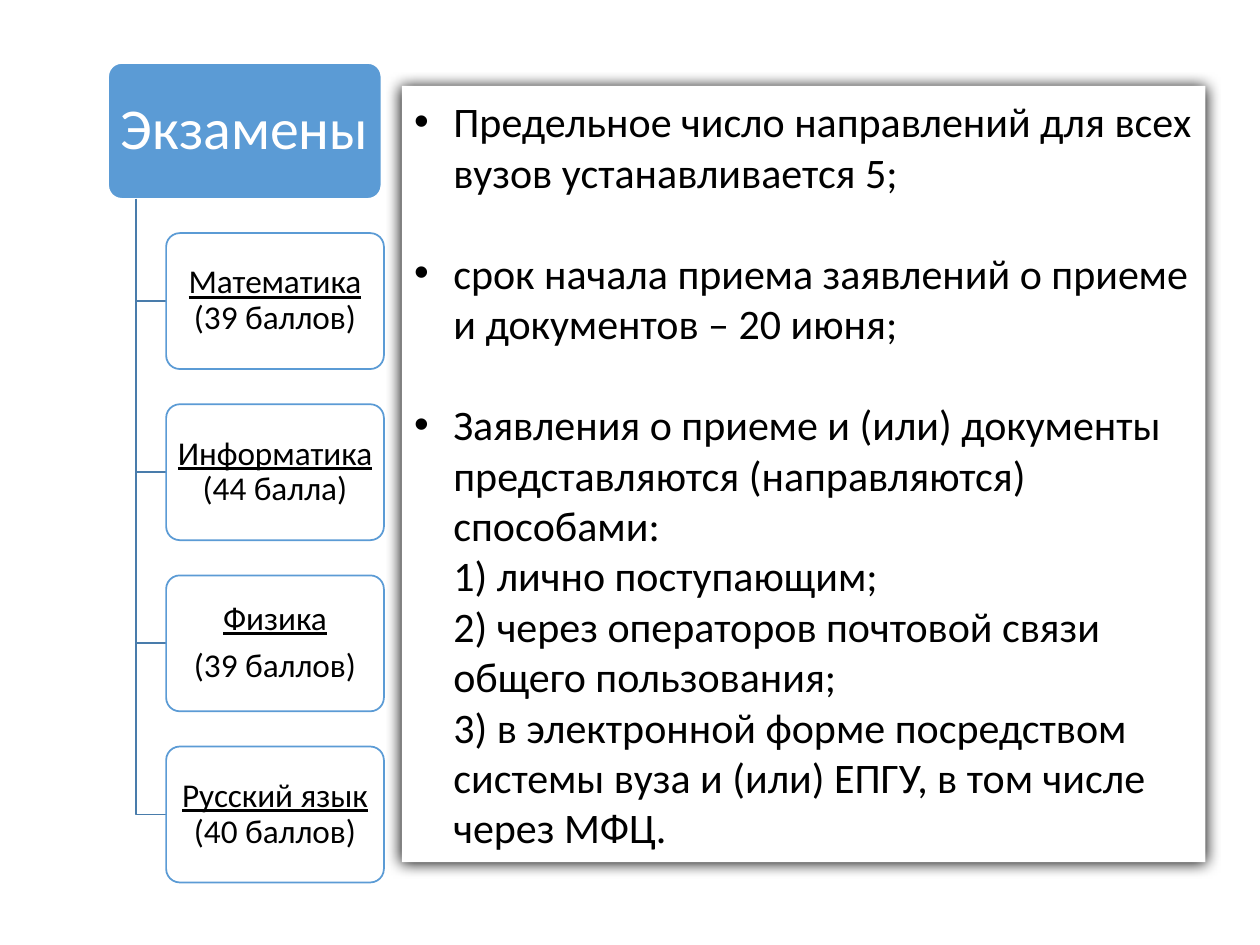
"""Exam subjects with minimum scores beside the rules for applying."""
import dataclasses

import lxml.etree
import pptx
import pptx.dml.color
import pptx.enum.shapes
import pptx.enum.text
import pptx.oxml
import pptx.oxml.ns
import pptx.util

Cm = pptx.util.Cm
Pt = pptx.util.Pt
Kind = pptx.enum.shapes.MSO_SHAPE

SUBJECTS = [
    [("Математика", " (39 баллов)")],
    [("Информатика", " (44 балла)")],
    [("Физика", ""), ("", "(39 баллов)")],
    [("Русский язык", " (40 баллов)")],
]
RULES = [
    "Предельное число направлений для всех вузов устанавливается 5;",
    "срок начала приема заявлений о приеме и документов – 20 июня;",
    "Заявления о приеме и (или) документы представляются (направляются) способами:\n"
    "1) лично поступающим;\n"
    "2) через операторов почтовой связи общего пользования;\n"
    "3) в электронной форме посредством системы вуза и (или) ЕПГУ, "
    "в том числе через МФЦ.",
]


@dataclasses.dataclass(frozen=True)
class Theme:
    """Colours and type of the slide."""
    font: str = "Calibri"
    accent: str = "5B9BD5"
    branch: str = "497CAB"
    white: str = "FFFFFF"
    black: str = "000000"
    heading_size: int = 33
    subject_size: int = 19
    rule_size: int = 24
    line_width: int = 1


class Board:
    """Draws the elements of one slide in a given theme."""

    def __init__(self, slide, theme):
        self.shapes = slide.shapes
        self.theme = theme

    def colour(self, target, value):
        target.rgb = pptx.dml.color.RGBColor.from_string(value)

    def style(self, paragraph, size, value):
        paragraph.font.name = self.theme.font
        paragraph.font.size = Pt(size)
        self.colour(paragraph.font.color, value)

    def outline(self, shape, value):
        self.colour(shape.line.color, value)
        shape.line.width = Pt(self.theme.line_width)

    def box(self, kind, left, top, width, height, fill):
        shape = self.shapes.add_shape(kind, Cm(left), Cm(top), Cm(width), Cm(height))
        shape.shadow.inherit = False
        shape.fill.solid()
        self.colour(shape.fill.fore_color, fill)
        shape.text_frame.word_wrap = True
        return shape

    def card(self, left, top, width, height, fill, line, lines, size, value, inset):
        card = self.box(Kind.ROUNDED_RECTANGLE, left, top, width, height, fill)
        card.adjustments[0] = 0.1
        self.outline(card, line)
        frame = card.text_frame
        frame.vertical_anchor = pptx.enum.text.MSO_ANCHOR.MIDDLE
        frame.margin_left = frame.margin_right = Cm(inset)
        frame.margin_top = frame.margin_bottom = Cm(0.08)
        for index, (name, score) in enumerate(lines):
            paragraph = frame.add_paragraph() if index else frame.paragraphs[0]
            paragraph.alignment = pptx.enum.text.PP_ALIGN.CENTER
            paragraph.line_spacing = 0.9
            if index:
                paragraph.space_before = Pt(6.5)
            self.style(paragraph, size, value)
            for text, underlined in ((name, True), (score, False)):
                if text:
                    run = paragraph.add_run()
                    run.text = text
                    run.font.underline = underlined
        return card

    def heading(self, text, left, top, width, height):
        theme = self.theme
        self.card(left, top, width, height, theme.accent, theme.white,
                  [("", text)], theme.heading_size, theme.white, 0.15)

    def subject(self, lines, left, top, width, height):
        theme = self.theme
        card = self.card(left, top, width, height, theme.white, theme.accent,
                         lines, theme.subject_size, theme.black, 0.1)
        tint = card.fill._xPr.find(".//" + pptx.oxml.ns.qn("a:srgbClr"))
        lxml.etree.SubElement(tint, pptx.oxml.ns.qn("a:alpha"), val="90000")

    def branch(self, left, top, right, bottom):
        builder = self.shapes.build_freeform(Cm(left), Cm(top))
        builder.add_line_segments(
            [(Cm(left), Cm(bottom)), (Cm(right), Cm(bottom))], close=False)
        elbow = builder.convert_to_shape()
        elbow.shadow.inherit = False
        elbow.fill.background()
        self.outline(elbow, self.theme.branch)

    def cast_shadow(self, shape):
        effects = shape._element.spPr.find(pptx.oxml.ns.qn("a:effectLst"))
        effects.append(pptx.oxml.parse_xml(
            f'<a:outerShdw {pptx.oxml.ns.nsdecls("a")} blurRad="{Pt(8.5)}" '
            f'dist="{Pt(1)}" dir="5400000" algn="t" rotWithShape="0">'
            f'<a:srgbClr val="{self.theme.black}"/></a:outerShdw>'))

    def rules(self, items, left, top, width, height):
        theme = self.theme
        panel = self.box(Kind.RECTANGLE, left, top, width, height, theme.white)
        panel.line.fill.background()
        self.cast_shadow(panel)
        frame = panel.text_frame
        frame.auto_size = pptx.enum.text.MSO_AUTO_SIZE.SHAPE_TO_FIT_TEXT
        for index, item in enumerate(items):
            paragraph = frame.add_paragraph() if index else frame.paragraphs[0]
            paragraph.text = item
            paragraph.alignment = pptx.enum.text.PP_ALIGN.LEFT
            properties = paragraph._p.get_or_add_pPr()
            properties.set("marL", str(Cm(0.79)))
            properties.set("indent", str(-Cm(0.79)))
            for tag, key, value in (("a:buFont", "typeface", "Arial"),
                                    ("a:buChar", "char", "•")):
                lxml.etree.SubElement(
                    properties, pptx.oxml.ns.qn(tag), {key: value})
            if index:
                paragraph.space_before = Pt(29)
            self.style(paragraph, theme.rule_size, theme.black)


def main():
    deck = pptx.Presentation()
    deck.slide_width, deck.slide_height = Cm(25.4), Cm(19.05)
    board = Board(deck.slides.add_slide(deck.slide_layouts[6]), Theme())

    card_height, first_top, step = 2.74, 4.7, 3.45
    heading_left, heading_top, subject_left = 2.18, 1.27, 3.35
    board.heading("Экзамены", heading_left, heading_top, 5.51, card_height)
    for index, lines in enumerate(SUBJECTS):
        top = first_top + index * step
        board.branch(2.74, heading_top + card_height,
                     subject_left, top + card_height / 2)
        board.subject(lines, subject_left, top, 4.39, card_height)
    board.rules(RULES, 8.1, 1.73, 16.2, 15.65)

    deck.save("out.pptx")


if __name__ == "__main__":
    main()
